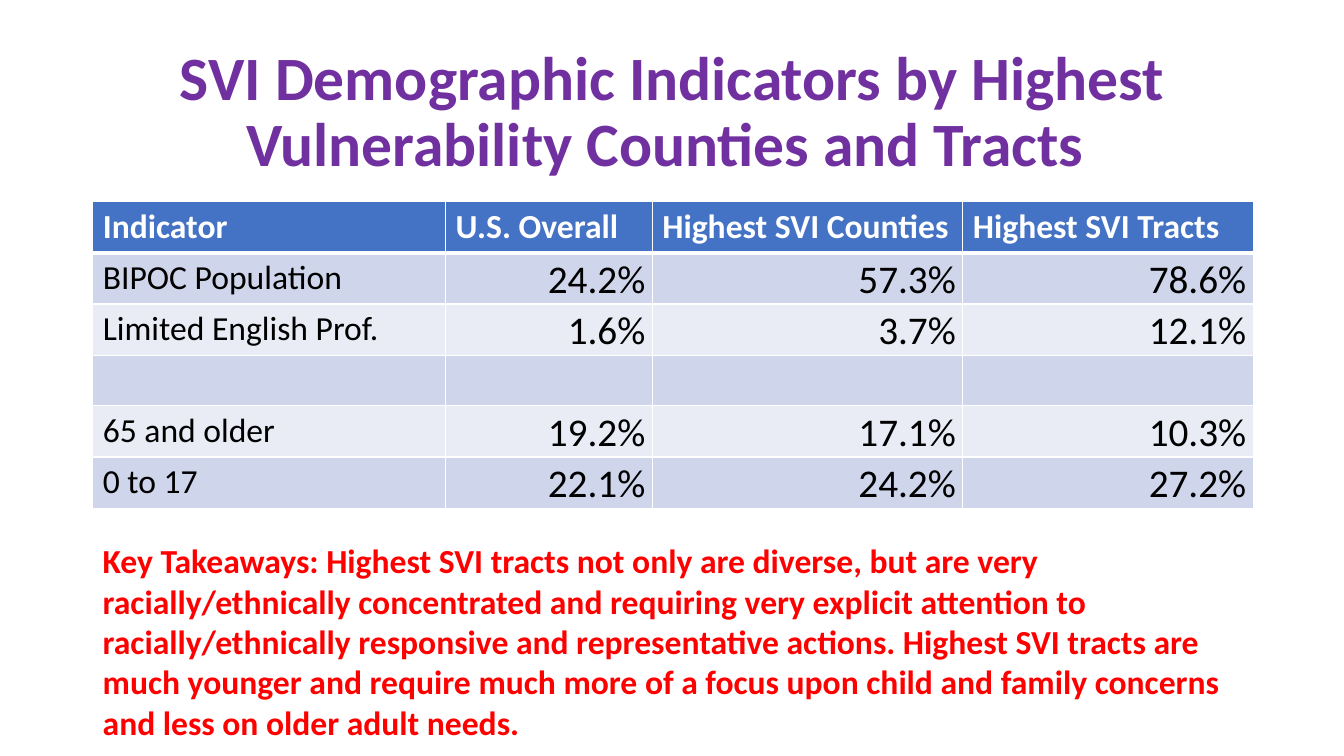
"""Build the slide on SVI demographic indicators."""
from dataclasses import dataclass

from lxml import etree
from pptx import Presentation, util as u
from pptx.dml import color
from pptx.enum import text
from pptx.oxml import ns


@dataclass(frozen=True)
class Theme:
    font: str = "Calibri"
    title: str = "7030A0"
    head: str = "4472C4"
    dark: str = "CFD5EA"
    light: str = "E9EBF5"
    white: str = "FFFFFF"
    ink: str = "000000"
    alert: str = "FF0000"
    big: int = 44
    mid: int = 28
    base: int = 24


@dataclass(frozen=True)
class Style:
    size: int
    ink: str
    bold: bool = False
    align: text.PP_ALIGN = text.PP_ALIGN.LEFT
    lead: float = 1.0


@dataclass(frozen=True)
class Row:
    label: str
    values: tuple[str, str, str]


THEME = Theme()
TITLE = Style(THEME.big, THEME.title, True, text.PP_ALIGN.CENTER, 0.9)
HEAD = Style(THEME.base, THEME.white, True)
LABEL = Style(THEME.base, THEME.ink)
VALUE = Style(THEME.mid, THEME.ink, False, text.PP_ALIGN.RIGHT, 1.07)
NOTE = Style(THEME.base, THEME.alert, True)

LEFT, WIDE = 0.92, 11.5
WIDTHS = (3.5, 2.05, 3.08, 2.88)
HIGH = 0.5
ROWS = (
    Row("Indicator", ("U.S. Overall", "Highest SVI Counties", "Highest SVI Tracts")),
    Row("BIPOC Population", ("24.2%", "57.3%", "78.6%")),
    Row("Limited English Prof.", ("1.6%", "3.7%", "12.1%")),
    Row("", ("", "", "")),
    Row("65 and older", ("19.2%", "17.1%", "10.3%")),
    Row("0 to 17", ("22.1%", "24.2%", "27.2%")),
)
HEADING = "SVI Demographic Indicators by Highest Vulnerability Counties and Tracts "
TAKEAWAY = (
    "Key Takeaways: Highest SVI tracts not only are diverse, but are very "
    "racially/ethnically concentrated and requiring very explicit attention to "
    "racially/ethnically responsive and representative actions. Highest SVI tracts "
    "are much younger and require much more of a focus upon child and family "
    "concerns and less on older adult needs."
)


def write(frame, words: str, style: Style) -> None:
    """Add one styled run to the first paragraph of a frame."""
    para = frame.paragraphs[0]
    para.alignment = style.align
    para.line_spacing = style.lead
    if not words:
        return
    run = para.add_run()
    run.text = words
    run.font.name = THEME.font
    run.font.size = u.Pt(style.size)
    run.font.bold = style.bold
    run.font.color.rgb = color.RGBColor.from_string(style.ink)


def edge(cell, side: str, width: float) -> None:
    """Draw one white border of a cell."""
    line = etree.SubElement(
        cell._tc.get_or_add_tcPr(), ns.qn(f"a:ln{side}"), w=str(u.Pt(width))
    )
    fill = etree.SubElement(line, ns.qn("a:solidFill"))
    etree.SubElement(fill, ns.qn("a:srgbClr"), val=THEME.white)


def paint(cell, words: str, style: Style, fill: str, top: float, base: float) -> None:
    """Fill, border and write one cell."""
    for side, width in (("L", 1), ("R", 1), ("T", top), ("B", base)):
        edge(cell, side, width)
    cell.fill.solid()
    cell.fill.fore_color.rgb = color.RGBColor.from_string(fill)
    if style is VALUE:
        cell.vertical_anchor = text.MSO_ANCHOR.BOTTOM
        cell.margin_left = cell.margin_right = u.Inches(0.07)
        cell.margin_top = cell.margin_bottom = 0
    write(cell.text_frame, words, style)


def grid(slide) -> None:
    """Add the table of indicators."""
    table = slide.shapes.add_table(
        len(ROWS), len(WIDTHS), u.Inches(LEFT), u.Inches(2),
        u.Inches(WIDE), u.Inches(HIGH * len(ROWS)),
    ).table
    for col, width in zip(table.columns, WIDTHS):
        col.width = u.Inches(width)
    for r, row in enumerate(ROWS):
        band = THEME.dark if r % 2 else THEME.light
        fill = band if r else THEME.head
        top, base = 3 if r == 1 else 1, 1 if r else 3
        for c, words in enumerate((row.label, *row.values)):
            style = HEAD if r == 0 else VALUE if c else LABEL
            paint(table.cell(r, c), words, style, fill, top, base)


def main() -> None:
    """Build and save the slide."""
    deck = Presentation()
    deck.slide_width, deck.slide_height = u.Inches(13.33), u.Inches(7.5)
    slide = deck.slides.add_slide(deck.slide_layouts[5])

    title = slide.shapes.title
    title.left, title.top = u.Inches(LEFT), u.Inches(0.4)
    title.width, title.height = u.Inches(WIDE), u.Inches(1.45)
    title.text_frame.auto_size = text.MSO_AUTO_SIZE.NONE
    title.text_frame.vertical_anchor = text.MSO_ANCHOR.MIDDLE
    write(title.text_frame, HEADING, TITLE)

    grid(slide)

    note = slide.shapes.add_textbox(
        u.Inches(LEFT), u.Inches(5.31), u.Inches(11.32), u.Inches(2.12)
    ).text_frame
    note.word_wrap = True
    note.auto_size = text.MSO_AUTO_SIZE.SHAPE_TO_FIT_TEXT
    write(note, TAKEAWAY, NOTE)

    deck.save("out.pptx")


if __name__ == "__main__":
    main()
